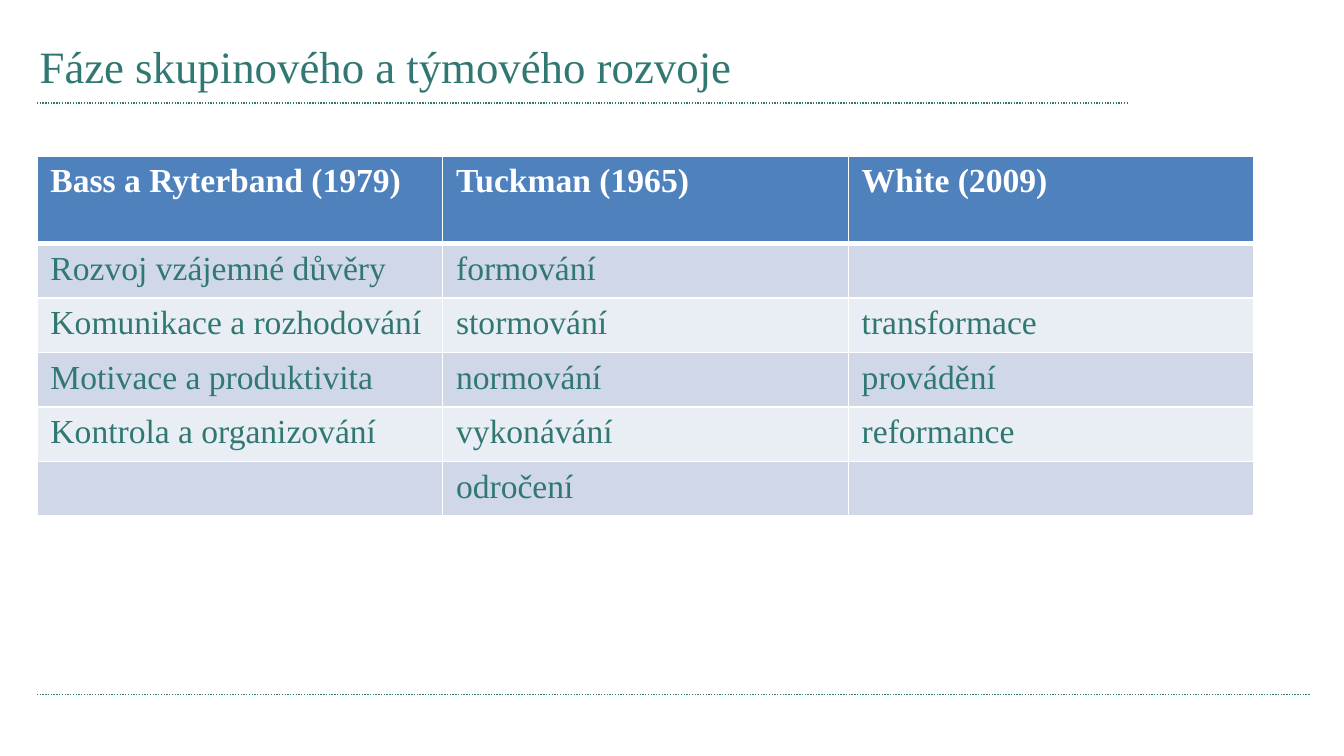
from lxml.etree import SubElement
from pptx import Presentation
from pptx.dml.color import RGBColor
from pptx.enum.dml import MSO_LINE
from pptx.enum.shapes import MSO_CONNECTOR
from pptx.enum.text import MSO_ANCHOR
from pptx.oxml.ns import qn
from pptx.util import Cm, Pt

GREEN, WHITE, BLUE = "307871", "FFFFFF", "4F81BD"
BANDS = ("D0D8E8", "E9EDF4")
PHASES = [
    ("Bass a Ryterband (1979)", "Tuckman (1965)", "White (2009)"),
    ("Rozvoj vzájemné důvěry", "formování", ""),
    ("Komunikace a rozhodování", "stormování", "transformace"),
    ("Motivace a produktivita", "normování", "provádění"),
    ("Kontrola a organizování", "vykonávání", "reformance"),
    ("", "odročení", ""),
]


def rgb(value):
    """Turn a hex string into a colour."""
    return RGBColor.from_string(value)


def write(frame, text, size=18, color=GREEN, bold=False):
    """Put formatted text into a text frame."""
    paragraph = frame.paragraphs[0]
    paragraph.font.size = Pt(size)
    if text:
        run = paragraph.add_run()
        run.text = text
        run.font.name = "Times New Roman"
        run.font.size = Pt(size)
        run.font.bold = bold
        run.font.color.rgb = rgb(color)


def add_rule(slide, left, top, width):
    """Draw a dotted horizontal rule."""
    rule = slide.shapes.add_connector(
        MSO_CONNECTOR.STRAIGHT, Cm(left), Cm(top), Cm(left + width), Cm(top))
    rule.line.color.rgb = rgb(GREEN)
    rule.line.width = Pt(0.75)
    rule.line.dash_style = MSO_LINE.ROUND_DOT
    SubElement(rule._element.spPr, qn("a:effectLst"))


def add_title(slide, left, top, width, height):
    """Place the title, centred vertically in its box."""
    title = slide.shapes.add_textbox(Cm(left), Cm(top), Cm(width), Cm(height))
    title.text_frame.word_wrap = True
    title.text_frame.vertical_anchor = MSO_ANCHOR.MIDDLE
    write(title.text_frame, "Fáze skupinového a týmového rozvoje", size=24)


def set_borders(cell, **widths):
    """Give a cell white borders, with widths in points by side."""
    properties = cell._tc.get_or_add_tcPr()
    for side in "LRTB":
        border = SubElement(properties, qn(f"a:ln{side}"), w=str(Pt(widths.get(side, 1))))
        fill = SubElement(border, qn("a:solidFill"))
        SubElement(fill, qn("a:srgbClr"), val=WHITE)


def add_phases(slide, left, top, width, height, header_height):
    """Place the table of phases, with equal columns and equal body rows."""
    row_count, column_count = len(PHASES), len(PHASES[0])
    table = slide.shapes.add_table(
        row_count, column_count, Cm(left), Cm(top), Cm(width), Cm(height)).table
    table.horz_banding = False
    for column in table.columns:
        column.width = Cm(width / column_count)
    body_height = (height - header_height) / (row_count - 1)
    for r, phases in enumerate(PHASES):
        header = r == 0
        table.rows[r].height = Cm(header_height if header else body_height)
        for c, phase in enumerate(phases):
            cell = table.cell(r, c)
            set_borders(cell, B=3 if header else 1, T=3 if r == 1 else 1)
            cell.fill.solid()
            cell.fill.fore_color.rgb = rgb(BLUE if header else BANDS[(r - 1) % 2])
            write(cell.text_frame, phase, color=WHITE if header else GREEN, bold=header)


def main():
    """Build the slide and save it."""
    deck = Presentation()
    deck.slide_width, deck.slide_height = Cm(25.4), Cm(14.29)
    slide = deck.slides.add_slide(deck.slide_layouts[6])
    add_rule(slide, 0.7, 1.95, 20.6)
    add_rule(slide, 0.7, 13.13, 24.06)
    add_phases(slide, 0.7, 2.95, 23, 6.8, header_height=1.65)
    add_title(slide, 0.5, 0.53, 19, 1.42)
    deck.save("out.pptx")


if __name__ == "__main__":
    main()
